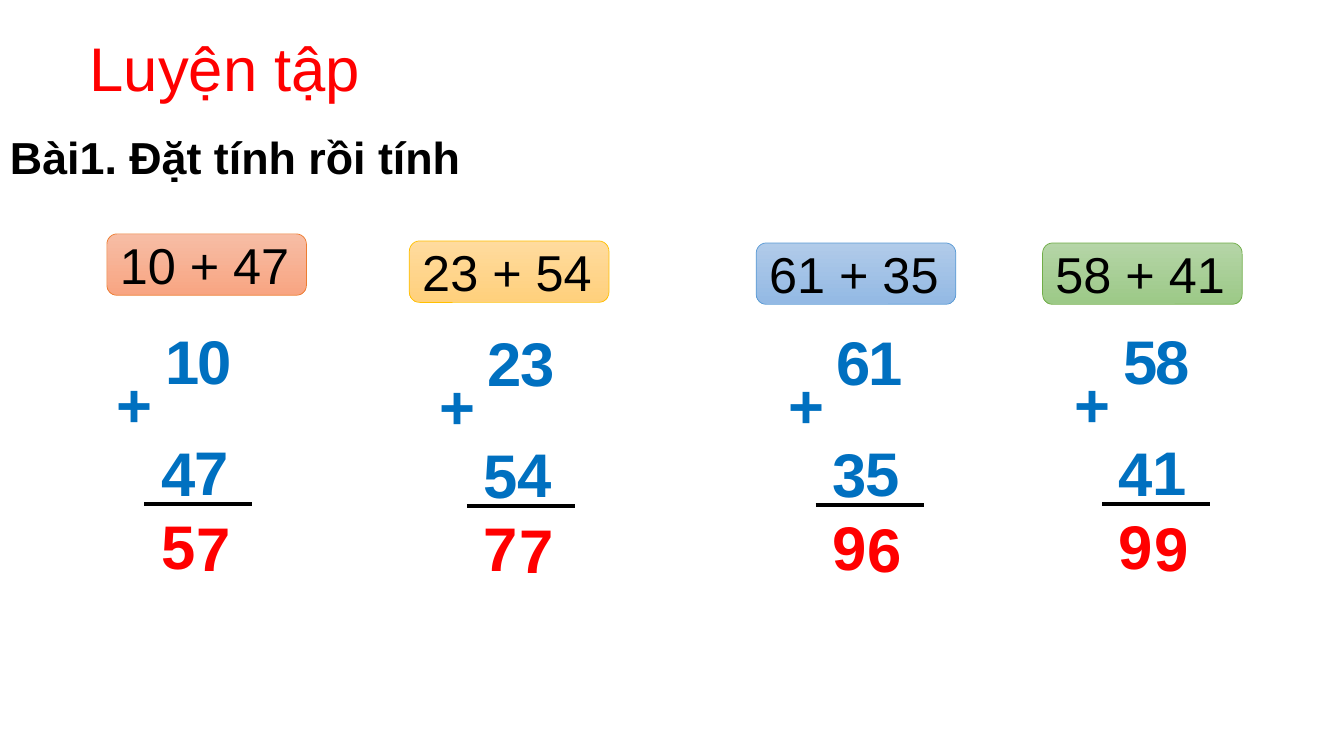
from dataclasses import dataclass

from lxml.etree import SubElement
from pptx import Presentation
from pptx.dml.color import RGBColor as RGB
from pptx.enum.shapes import MSO_CONNECTOR as Connector, MSO_SHAPE as Preset
from pptx.enum.text import MSO_ANCHOR as Anchor, MSO_AUTO_SIZE as AutoSize, PP_ALIGN as Align
from pptx.oxml.ns import qn
from pptx.shapes.autoshape import Shape
from pptx.slide import Slide
from pptx.util import Inches, Pt


@dataclass(frozen=True)
class Theme:
    font: str = "Arial"
    red: str = "FF0000"
    blue: str = "0070C0"
    black: str = "000000"
    white: str = "FFFFFF"
    large: int = 44
    medium: int = 36
    small: int = 32


@dataclass(frozen=True)
class Box:
    left: float
    top: float
    width: float
    height: float

    def shifted(self, dx: float, dy: float) -> "Box":
        return Box(self.left + dx, self.top + dy, self.width, self.height)

    def lengths(self) -> list[int]:
        return [Inches(v) for v in (self.left, self.top, self.width, self.height)]


@dataclass(frozen=True)
class Addition:
    augend: int
    addend: int
    left: float
    drop: float
    card_left: float
    card_top: float
    gradient: tuple[str, str]
    outline: str


@dataclass(frozen=True)
class Part:
    content: str
    box: Box
    color: str
    wrap: bool = True
    framed: bool = False


THEME = Theme()
ADDITIONS = (
    Addition(10, 47, 1.06, 0, 1.06, 2.32, ("F7BDA5", "F8A582"), "ED7D31"),
    Addition(23, 54, 4.26, 0.02, 4.06, 2.39, ("FFDB9E", "FFD07C"), "FFC000"),
    Addition(61, 35, 7.72, 0.01, 7.5, 2.41, ("B1CBE9", "93B9E4"), "5B9BD5"),
    Addition(58, 41, 10.56, 0, 10.34, 2.41, ("B5D5A7", "9CC987"), "70AD47"),
)


def write(shape: Shape, content: str, size: int, color: str, bold: bool = False,
          wrap: bool = True, anchor: Anchor = Anchor.TOP, grow: bool = True) -> None:
    frame = shape.text_frame
    frame_format = {
        "word_wrap": wrap,
        "vertical_anchor": anchor,
        "auto_size": AutoSize.SHAPE_TO_FIT_TEXT if grow else AutoSize.NONE,
    }
    for name, value in frame_format.items():
        setattr(frame, name, value)
    paragraph = frame.paragraphs[0]
    paragraph.alignment = Align.LEFT
    run = paragraph.add_run()
    run.text = content
    for name, value in {"name": THEME.font, "size": Pt(size), "bold": bold}.items():
        setattr(run.font, name, value)
    run.font.color.rgb = RGB.from_string(color)


def outlined(slide: Slide, preset: Preset, box: Box, color: str, width: float) -> Shape:
    shape = slide.shapes.add_shape(preset, *box.lengths())
    shape.shadow.inherit = False
    shape.line.color.rgb = RGB.from_string(color)
    shape.line.width = Pt(width)
    return shape


def draw_part(slide: Slide, part: Part) -> None:
    if part.framed:
        shape = outlined(slide, Preset.RECTANGLE, part.box, THEME.white, 0.75)
        shape.fill.background()
    else:
        shape = slide.shapes.add_textbox(*part.box.lengths())
    write(shape, part.content, THEME.large, part.color, bold=True, wrap=part.wrap)


def draw_sum_line(slide: Slide, left: float, top: float) -> None:
    line = slide.shapes.add_connector(
        Connector.STRAIGHT, Inches(left), Inches(top), Inches(left + 1.07), Inches(top))
    line.line.color.rgb = RGB.from_string(THEME.black)
    line.line.width = Pt(3)
    SubElement(line._element.spPr, qn("a:effectLst"))


def draw_column(slide: Slide, addition: Addition) -> None:
    upper, lower = str(addition.augend), str(addition.addend)
    total = str(addition.augend + addition.addend)
    parts = (
        Part(upper[0], Box(0.48, 3.15, 0.65, 0.84), THEME.blue),
        Part(upper[1], Box(0.8, 3.15, 0.7, 0.84), THEME.blue),
        Part(lower[0], Box(0.44, 4.27, 0.33, 0.84), THEME.blue, framed=True),
        Part(lower[1], Box(0.77, 4.26, 0.57, 0.84), THEME.blue),
        Part("+", Box(0, 3.58, 0.56, 0.84), THEME.blue, wrap=False),
        Part(total[0], Box(0.44, 4.99, 0.33, 0.84), THEME.red),
        Part(total[1], Box(0.79, 5.01, 0.55, 0.84), THEME.red, wrap=False),
    )
    for part in parts:
        box = part.box.shifted(addition.left, addition.drop)
        draw_part(slide, Part(part.content, box, part.color, part.wrap, part.framed))
    draw_sum_line(slide, addition.left + 0.37, 5 + addition.drop)


def draw_card(slide: Slide, addition: Addition) -> None:
    box = Box(addition.card_left, addition.card_top, 1.98, 0.61)
    card = outlined(slide, Preset.ROUNDED_RECTANGLE, box, addition.outline, 0.5)
    card.fill.gradient()
    card.fill.gradient_angle = 270
    for stop, color in zip(card.fill.gradient_stops, addition.gradient):
        stop.color.rgb = RGB.from_string(color)
    write(card, f"{addition.augend} + {addition.addend}", THEME.medium, THEME.black,
          anchor=Anchor.MIDDLE, grow=False)


def main() -> None:
    deck = Presentation()
    deck.slide_width, deck.slide_height = Inches(13.33), Inches(7.5)
    slide = deck.slides.add_slide(deck.slide_layouts[6])

    title = slide.shapes.add_textbox(*Box(0.79, -0.02, 11.5, 1.45).lengths())
    write(title, "Luyện tập", THEME.large, THEME.red, anchor=Anchor.MIDDLE, grow=False)
    title.text_frame.paragraphs[0].line_spacing = 0.9

    exercise = slide.shapes.add_textbox(*Box(0, 1.24, 7.82, 0.64).lengths())
    write(exercise, "Bài1. Đặt tính rồi tính", THEME.small, THEME.black, bold=True)

    for addition in ADDITIONS:
        draw_column(slide, addition)
        draw_card(slide, addition)

    deck.save("out.pptx")


if __name__ == "__main__":
    main()
